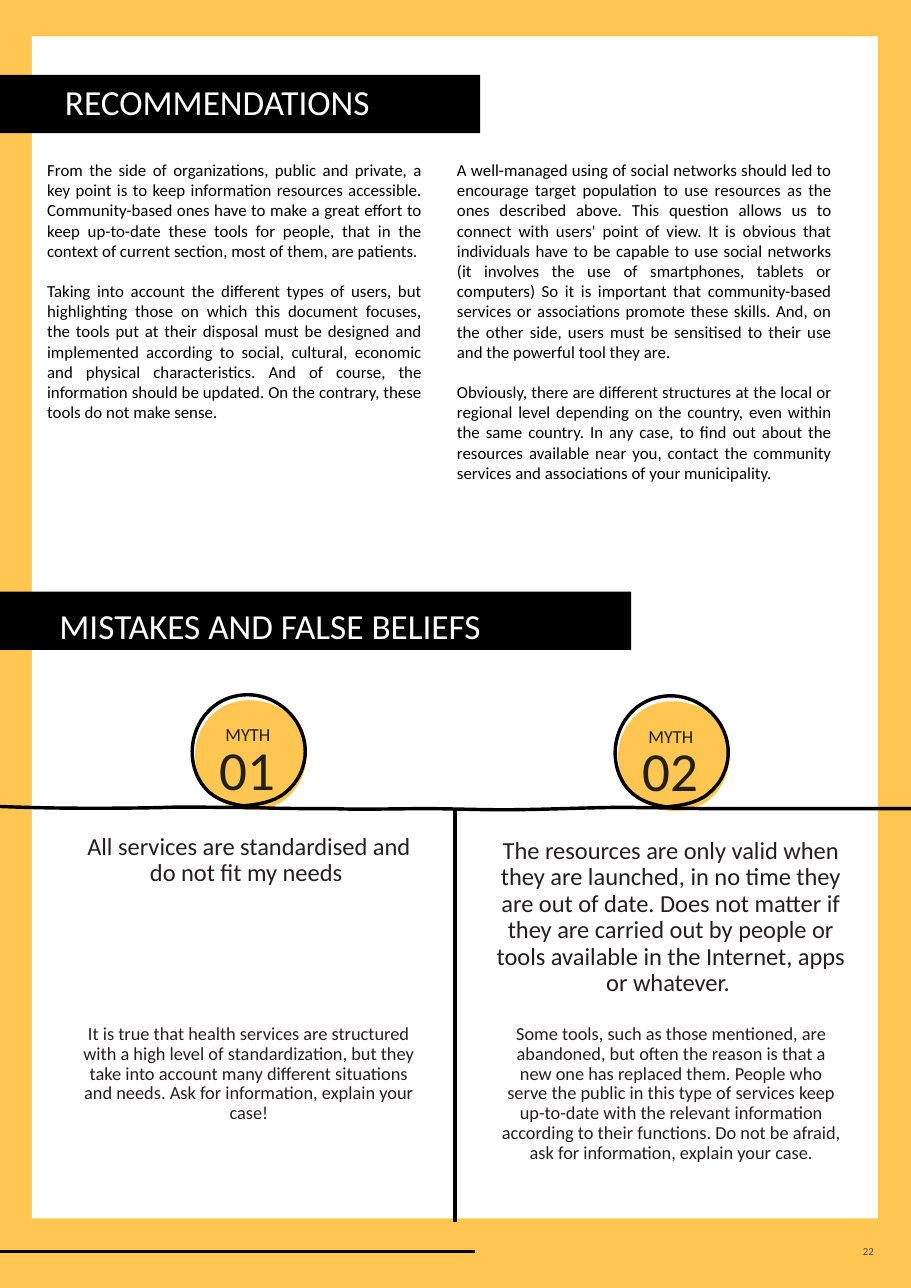
from lxml import etree
from pptx import Presentation
from pptx.dml.color import RGBColor
from pptx.enum import shapes, text
from pptx.oxml import ns
from pptx.util import Inches, Pt

COLORS = {"yellow": "FFC652", "white": "FFFFFF", "black": "000000",
          "ink": "231F20", "gray": "4B4B4B"}
ALIGN = text.PP_ALIGN
MIDDLE = text.MSO_ANCHOR.MIDDLE

RECOMMENDATIONS = [
    ["From the side of organizations, public and private, a key point is to keep information resources accessible. Community-based ones have to make a great effort to keep up-to-date these tools for people, that in the context of current section, most of them, are patients.",
     "Taking into account the different types of users, but highlighting those on which this document focuses, the tools put at their disposal must be designed and implemented according to social, cultural, economic and physical characteristics. And of course, the information should be updated. On the contrary, these tools do not make sense."],
    ["A well-managed using of social networks should led to encourage target population to use resources as the ones described above. This question allows us to connect with users' point of view. It is obvious that individuals have to be capable to use social networks (it involves the use of smartphones, tablets or computers) So it is important that community-based services or associations promote these skills. And, on the other side, users must be sensitised to their use and the powerful tool they are.",
     "Obviously, there are different structures at the local or regional level depending on the country, even within the same country. In any case, to find out about the resources available near you, contact the community services and associations of your municipality."],
]

MYTHS = [
    {"number": "01", "badge": (1.75, 6.31),
     "belief": "All services are standardised and do not fit my needs ",
     "belief_box": (0.63, 7.52, 3.26, 0.46),
     "answer": "It is true that health services are structured with a high level of standardization, but they take into account many different situations and needs. Ask for information, explain your case!",
     "answer_box": (0.59, 9.25, 3.34, 1.98)},
    {"number": "02", "badge": (5.59, 6.32),
     "belief": "The resources are only valid when they are launched, in no time they are out of date. Does not matter if they are carried out by people or tools available in the Internet, apps or whatever. ",
     "belief_box": (4.3, 7.56, 3.58, 0.46),
     "answer": "Some tools, such as those mentioned, are abandoned, but often the reason is that a new one has replaced them. People who serve the public in this type of services keep up-to-date with the relevant information according to their functions. Do not be afraid, ask for information, explain your case.",
     "answer_box": (4.43, 9.25, 3.33, 1.65)},
]

DISC = [(0.17, 0.9),
        (0.25, 0.98, 0.37, 1.03, 0.49, 1.04), (0.59, 1.05, 0.69, 1.03, 0.77, 0.99),
        (0.93, 0.91, 1.04, 0.72, 1.03, 0.53), (1.02, 0.37, 0.93, 0.21, 0.8, 0.12),
        (0.66, 0.04, 0.47, 0.02, 0.33, 0.08), (0.17, 0.14, 0.06, 0.29, 0.03, 0.45),
        (0, 0.61, 0.05, 0.79, 0.17, 0.9)]
RING = [(0.38, 1.01),
        (0.52, 1, 0.67, 0.99, 0.79, 0.92), (0.92, 0.84, 1.01, 0.7, 1.02, 0.54),
        (1.04, 0.2, 0.71, -0.07, 0.38, 0.01), (0.07, 0.08, -0.09, 0.44, 0.04, 0.73),
        (0.13, 0.93, 0.31, 0.99, 0.51, 1.01)]
WAVE = [(0, 7.32),
        (0.49, 7.34, 0.98, 7.34, 1.47, 7.33), (1.67, 7.32, 1.92, 7.33, 2.3, 7.33),
        (2.55, 7.34, 2.79, 7.34, 3.04, 7.34), (3.23, 7.35, 3.63, 7.34, 3.86, 7.34),
        (4.09, 7.34, 4.33, 7.35, 4.57, 7.35), (4.97, 7.35, 5.55, 7.32, 5.78, 7.33),
        (6.01, 7.33, 6.24, 7.34, 6.48, 7.34), (6.67, 7.34, 7.4, 7.34, 7.45, 7.34),
        (7.68, 7.34, 7.9, 7.34, 8.12, 7.34), (8.17, 7.34, 8.22, 7.34, 8.27, 7.34)]


def rgb(color):
    return RGBColor.from_string(COLORS[color])


def write(shape, paragraphs, size, color, align, anchor=text.MSO_ANCHOR.TOP,
          spacing=None, gap=0, margins=(0.1, 0.05, 0.1, 0.05)):
    frame = shape.text_frame
    left, top, right, bottom = map(Inches, margins)
    frame_format = {"word_wrap": True, "vertical_anchor": anchor,
                    "margin_left": left, "margin_top": top,
                    "margin_right": right, "margin_bottom": bottom}
    for key, value in frame_format.items():
        setattr(frame, key, value)
    for index, words in enumerate(paragraphs):
        paragraph = frame.add_paragraph() if index else frame.paragraphs[0]
        paragraph.alignment = align
        paragraph.line_spacing = spacing
        if index:
            paragraph.space_before = Pt(gap)
        run = paragraph.add_run()
        run.text = words
        for key, value in {"name": "Calibri", "size": Pt(size)}.items():
            setattr(run.font, key, value)
        run.font.color.rgb = rgb(color)


def add_text(slide, box, paragraphs, size, color, align, **options):
    label = slide.shapes.add_textbox(*map(Inches, box))
    write(label, paragraphs, size, color, align, **options)


def add_panel(slide, box, color):
    panel = slide.shapes.add_shape(shapes.MSO_SHAPE.RECTANGLE, *map(Inches, box))
    panel.shadow.inherit = False
    panel.fill.solid()
    panel.fill.fore_color.rgb = rgb(color)
    panel.line.fill.background()
    return panel


def add_banner(slide, box, title, indent, top_margin=0.05):
    banner = add_panel(slide, box, "black")
    write(banner, [title], 23, "white", ALIGN.LEFT, anchor=MIDDLE, spacing=0.9,
          margins=(indent, top_margin, 0.1, 0.05))


def add_rule(slide, start, end, width):
    rule = slide.shapes.add_connector(shapes.MSO_CONNECTOR.STRAIGHT,
                                      *map(Inches, start + end))
    rule.line.color.rgb = rgb("black")
    rule.line.width = Pt(width)
    etree.SubElement(rule._element.spPr, ns.qn("a:effectLst"))


def bend_segments(outline, curves, origin):
    segments = list(outline._element.spPr.iter(ns.qn("a:lnTo")))
    for segment, curve in zip(segments, curves):
        segment.tag = ns.qn("a:cubicBezTo")
        for child in list(segment):
            segment.remove(child)
        for x, y in zip(curve[::2], curve[1::2]):
            etree.SubElement(segment, ns.qn("a:pt"),
                             x=str(Inches(origin[0] + x) - outline.left),
                             y=str(Inches(origin[1] + y) - outline.top))


def add_curve(slide, curves, origin=(0, 0), fill=None):
    ends = [(Inches(origin[0] + curve[-2]), Inches(origin[1] + curve[-1]))
            for curve in curves]
    builder = slide.shapes.build_freeform(*ends[0])
    builder.add_line_segments(ends[1:], close=bool(fill))
    outline = builder.convert_to_shape()
    bend_segments(outline, curves[1:], origin)
    outline.shadow.inherit = False
    if fill:
        outline.fill.solid()
        outline.fill.fore_color.rgb = rgb(fill)
        outline.line.fill.background()
    else:
        outline.fill.background()
        outline.line.color.rgb = rgb("black")
        outline.line.width = Pt(2.25)


def add_myth(slide, myth):
    left, top = myth["badge"]
    centred = {"color": "ink", "align": ALIGN.CENTER, "spacing": 0.9}
    add_text(slide, myth["answer_box"], [myth["answer"]], 12, **centred)
    add_text(slide, myth["belief_box"], [myth["belief"]], 16, **centred)
    add_curve(slide, DISC, myth["badge"], "yellow")
    badge_text = {**centred, "anchor": MIDDLE, "margins": (0, 0, 0, 0)}
    add_text(slide, (left - 0.02, top + 0.36, 1.04, 0.68), [myth["number"]], 36, **badge_text)
    add_text(slide, (left - 0.01, top + 0.25, 1.02, 0.24), ["MYTH"], 12, **badge_text)
    add_curve(slide, RING, myth["badge"])


def main():
    deck = Presentation()
    deck.slide_width, deck.slide_height = Inches(8.27), Inches(11.69)
    slide = deck.slides.add_slide(deck.slide_layouts[6])

    add_panel(slide, (0, 0, 8.27, 11.69), "yellow")
    add_panel(slide, (0.29, 0.33, 7.68, 10.73), "white")
    add_rule(slide, (0, 11.36), (4.31, 11.36), 1.5)

    add_banner(slide, (0, 0.68, 4.36, 0.53), "RECOMMENDATIONS", 0.59)
    for column, paragraphs in enumerate(RECOMMENDATIONS):
        add_text(slide, (0.33 + 3.72 * column, 1.4, 3.6, 3.1), paragraphs, 11,
                 "black", ALIGN.JUSTIFY, gap=13)

    add_banner(slide, (0, 5.37, 5.73, 0.53), "MISTAKES AND FALSE BELIEFS", 0.54, 0.18)
    add_rule(slide, (4.13, 7.35), (4.13, 11.09), 2.25)
    for myth in MYTHS:
        add_myth(slide, myth)
    add_curve(slide, WAVE)

    add_text(slide, (6.95, 11.28, 1.08, 0.16), ["22"], 7, "gray", ALIGN.RIGHT,
             anchor=MIDDLE, margins=(0.1, 0, 0.1, 0))
    deck.save("out.pptx")


if __name__ == "__main__":
    main()
